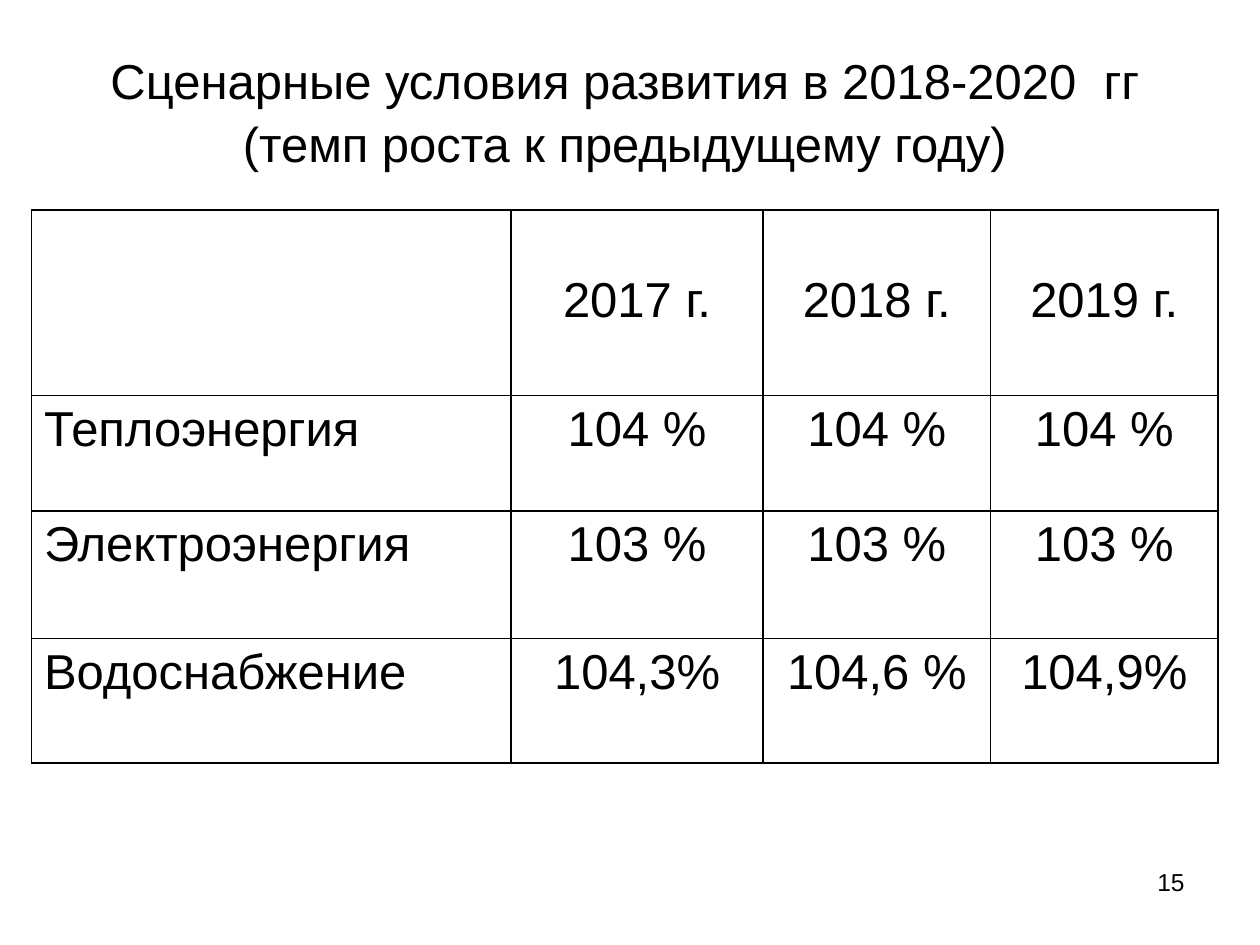
import pptx
import pptx.util
import pptx.dml.color
import pptx.enum.text
import pptx.oxml
import lxml.etree

Pt = pptx.util.Pt
ALIGN = pptx.enum.text.PP_ALIGN
ANCHOR = pptx.enum.text.MSO_ANCHOR
BLACK = "000000"
TITLE = "Сценарные условия развития в 2018-2020  гг (темп роста к предыдущему году)"
GROWTH = [
    ["", "2017 г.", "2018 г.", "2019 г."],
    ["Теплоэнергия", "104 %", "104 %", "104 %"],
    ["Электроэнергия", "103 %", "103 %", "103 %"],
    ["Водоснабжение", "104,3%", "104,6 %", "104,9%"],
]
COLUMN_WIDTHS = [274, 144, 130, 130]
ROW_HEIGHTS = [106, 66, 73, 71]


def colour(hex_code):
    """Turn a hex string into a colour."""
    return pptx.dml.color.RGBColor.from_string(hex_code)


def write(paragraph, text, size, align):
    """Add one formatted run to a paragraph."""
    paragraph.alignment = align
    run = paragraph.add_run()
    run.text = text
    run.font.name = "Arial"
    run.font.size = Pt(size)
    run.font.color.rgb = colour(BLACK)


def add_title(slide):
    """Place the title in the upper part of its placeholder."""
    title = slide.shapes.title
    title.left, title.top, title.width, title.height = Pt(36), Pt(21.6), Pt(642), Pt(116.6)
    frame = title.text_frame
    frame.auto_size = pptx.enum.text.MSO_AUTO_SIZE.NONE
    frame.word_wrap = True
    frame.vertical_anchor = ANCHOR.MIDDLE
    frame.margin_bottom = Pt(38)
    frame.paragraphs[0].line_spacing = 1.07
    write(frame.paragraphs[0], TITLE, 28, ALIGN.CENTER)


def draw_borders(cell):
    """Give a cell thin black lines on all four sides."""
    properties = cell._tc.get_or_add_tcPr()
    for position, side in enumerate(("lnL", "lnR", "lnT", "lnB")):
        line = pptx.oxml.parse_xml(
            f'<a:{side} xmlns:a="http://schemas.openxmlformats.org/drawingml/2006/main" '
            f'w="{Pt(1)}"><a:solidFill><a:srgbClr val="{BLACK}"/></a:solidFill></a:{side}>'
        )
        properties.insert(position, line)


def fill_cell(cell, text, is_header, is_label):
    """Format one table cell and write its text with a hanging indent."""
    cell.fill.background()
    draw_borders(cell)
    if is_header:
        cell.margin_top = Pt(36)
    if text:
        paragraph = cell.text_frame.paragraphs[0]
        write(paragraph, text, 28, ALIGN.LEFT if is_label else ALIGN.CENTER)
        indents = paragraph._p.get_or_add_pPr()
        indents.set("marL", str(Pt(27)))
        indents.set("indent", str(-Pt(27)))


def add_growth_table(slide):
    """Add the table of growth rates by resource and year."""
    table = slide.shapes.add_table(
        len(GROWTH), len(COLUMN_WIDTHS), Pt(18), Pt(120),
        Pt(sum(COLUMN_WIDTHS)), Pt(sum(ROW_HEIGHTS)),
    ).table
    table.horz_banding = False
    table.first_row = False
    for column, width in zip(table.columns, COLUMN_WIDTHS):
        column.width = Pt(width)
    for row, height in zip(table.rows, ROW_HEIGHTS):
        row.height = Pt(height)
    for r, values in enumerate(GROWTH):
        for c, value in enumerate(values):
            fill_cell(table.cell(r, c), value, r == 0, c == 0)


def add_page_number(slide):
    """Add the page number at the lower right."""
    number = slide.shapes.add_textbox(Pt(516), Pt(492), Pt(168), Pt(37.5))
    number.text_frame.word_wrap = True
    write(number.text_frame.paragraphs[0], "15", 14, ALIGN.RIGHT)


def main():
    """Build the slide and save it."""
    deck = pptx.Presentation()
    deck.slide_width, deck.slide_height = Pt(720), Pt(540)
    slide = deck.slides.add_slide(deck.slide_layouts[5])
    slide.background.fill.solid()
    slide.background.fill.fore_color.rgb = colour("FFFFFF")
    add_page_number(slide)
    add_title(slide)
    add_growth_table(slide)
    deck.save("out.pptx")


if __name__ == "__main__":
    main()
